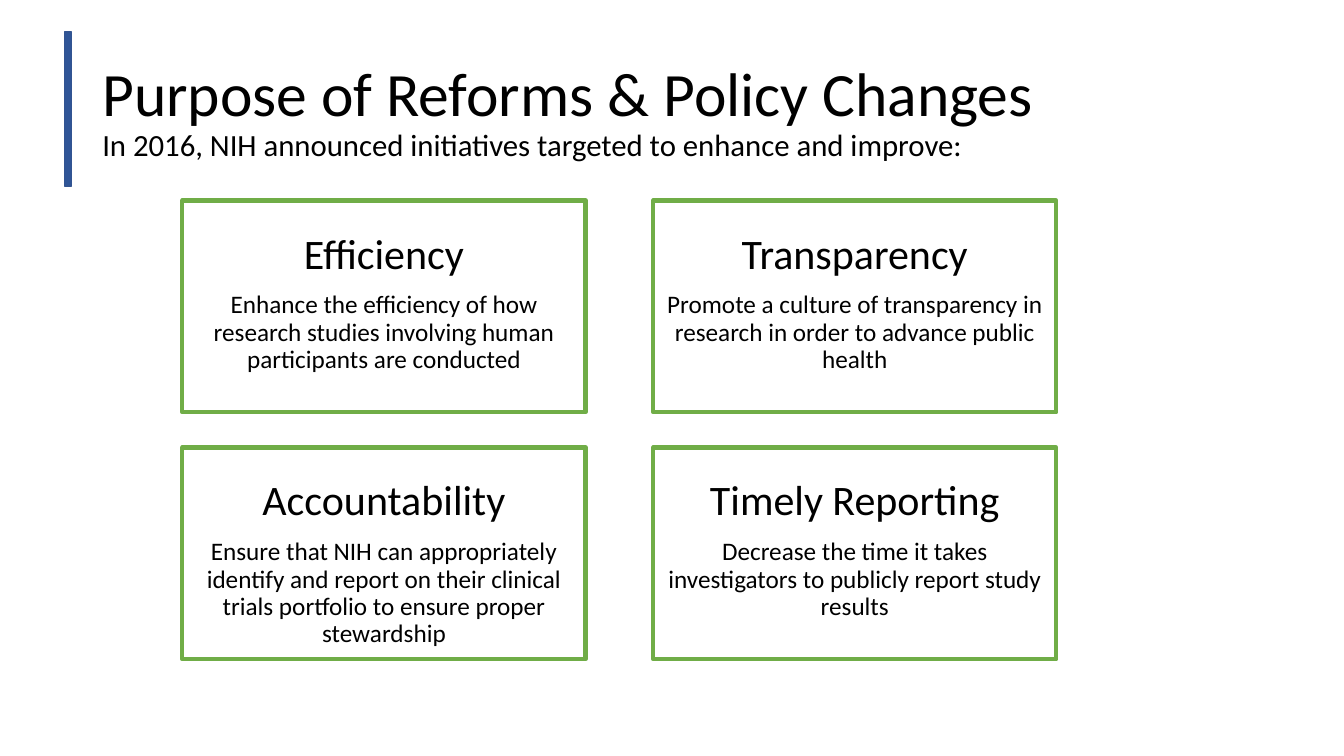
from dataclasses import dataclass

from pptx import Presentation
from pptx.dml.color import RGBColor
from pptx.enum.shapes import MSO_SHAPE
from pptx.enum.text import MSO_ANCHOR, PP_ALIGN
from pptx.util import Pt

RECT = MSO_SHAPE.RECTANGLE
MIDDLE, TOP = MSO_ANCHOR.MIDDLE, MSO_ANCHOR.TOP
CENTER = PP_ALIGN.CENTER


@dataclass(frozen=True)
class Theme:
    """Colours, font and type sizes."""
    font: str = "Calibri"
    ink: str = "000000"
    paper: str = "FFFFFF"
    green: str = "70AD47"
    blue: str = "2F5597"
    edge: str = "325491"
    title: int = 44
    lead: int = 22
    head: int = 30
    body: int = 18


THEME = Theme()
GOALS = [
    ("Efficiency", "Enhance the efficiency of how research studies involving "
     "human participants are conducted"),
    ("Transparency", "Promote a culture of transparency in research in order "
     "to advance public health"),
    ("Accountability", "Ensure that NIH can appropriately identify and report "
     "on their clinical trials portfolio to ensure proper stewardship"),
    ("Timely Reporting", "Decrease the time it takes investigators to "
     "publicly report study results"),
]


def style(run, size):
    """Set the font, size and colour of a run."""
    run.font.name = THEME.font
    run.font.size = Pt(size)
    run.font.color.rgb = RGBColor.from_string(THEME.ink)


def block(slide, box, fill, line, width):
    """Draw a flat outlined rectangle."""
    shape = slide.shapes.add_shape(RECT, *map(Pt, box))
    shape.shadow.inherit = False
    shape.fill.solid()
    shape.fill.fore_color.rgb = RGBColor.from_string(fill)
    shape.line.color.rgb = RGBColor.from_string(line)
    shape.line.width = Pt(width)
    return shape


def header(slide, box):
    """Place the accent bar, title and lead line."""
    left, top, width, height = box
    block(slide, (left, top, 5, 110), THEME.blue, THEME.edge, 1)
    label = slide.shapes.add_textbox(
        Pt(left + 20), Pt(top + 6), Pt(width - 20), Pt(height - 6))
    frame = label.text_frame
    frame.word_wrap = True
    frame.vertical_anchor = MIDDLE
    frame.text = ("Purpose of Reforms & Policy Changes\v"
                  "In 2016, NIH announced initiatives targeted to enhance "
                  "and improve:")
    para = frame.paragraphs[0]
    para.line_spacing = 0.9
    for run, size in zip(para.runs, (THEME.title, THEME.lead)):
        style(run, size)


def card(slide, box, goal):
    """Draw one goal with its heading and text."""
    frame = block(slide, box, THEME.paper, THEME.green, 3).text_frame
    frame.word_wrap = True
    frame.vertical_anchor = TOP
    frame.margin_top = Pt(23)
    frame.text = "\n".join(goal)
    for para, size in zip(frame.paragraphs, (THEME.head, THEME.body)):
        para.alignment = CENTER
        para.line_spacing = 0.9
        style(para.runs[0], size)
    frame.paragraphs[1].space_before = Pt(10)


def grid(slide, box):
    """Lay the goals out in two columns and two rows."""
    left, top, width, height = box
    wide, high = 288, 151.2
    for i, goal in enumerate(GOALS):
        row, col = divmod(i, 2)
        spot = (left + col * (width - wide), top + row * (height - high),
                wide, high)
        card(slide, spot, goal)


def main():
    """Build and save the deck."""
    deck = Presentation()
    deck.slide_width, deck.slide_height = Pt(960), Pt(540)
    slide = deck.slides.add_slide(deck.slide_layouts[6])
    header(slide, (46, 23, 809, 109.5))
    grid(slide, (130.3, 143.3, 624.3, 327.6))
    deck.save("out.pptx")


if __name__ == "__main__":
    main()
